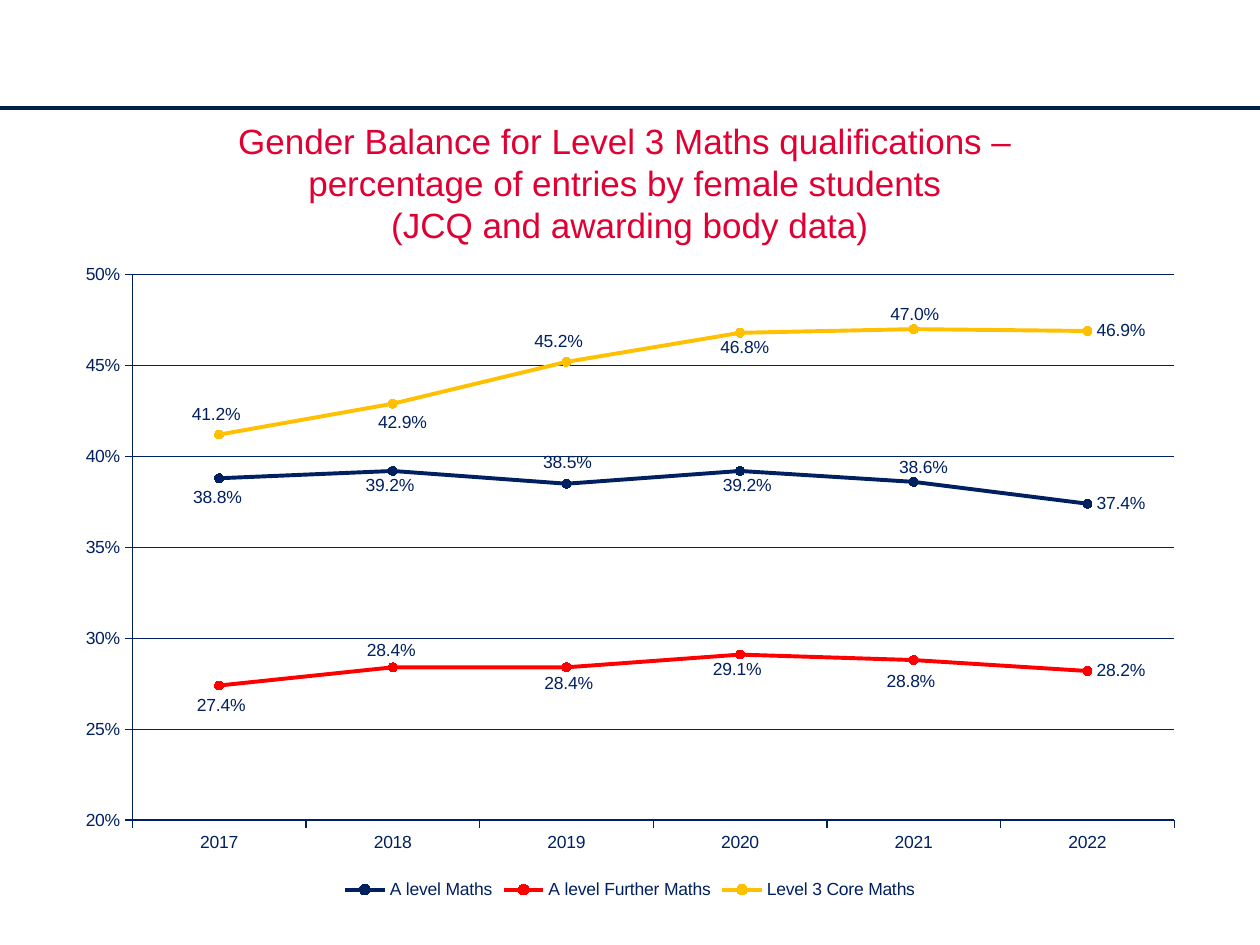
from dataclasses import dataclass

from lxml import etree
from pptx import Presentation
from pptx.chart.data import CategoryChartData
from pptx.dml.color import RGBColor
from pptx.enum.chart import (
    XL_CHART_TYPE as ChartType,
    XL_LABEL_POSITION as LabelPosition,
    XL_LEGEND_POSITION as LegendPosition,
    XL_MARKER_STYLE as MarkerStyle,
    XL_TICK_MARK as TickMark,
)
from pptx.enum.shapes import MSO_CONNECTOR as Connector
from pptx.enum.text import MSO_ANCHOR as Anchor, PP_ALIGN as Align
from pptx.oxml.ns import qn
from pptx.util import Inches, Pt


@dataclass(frozen=True)
class Theme:
    font: str = "Arial"
    title_size: int = 20
    chart_size: int = 10
    rule_width: float = 2.25
    axis_width: float = 0.75
    marker_size: int = 5
    rule: str = "002147"
    title: str = "E00034"
    navy: str = "002060"
    red: str = "FF0000"
    amber: str = "FFC000"


THEME = Theme()
CHART_BOX = (0.5, 2, 9, 5.18)
PLOT_BOX = (0.55, 0.18, 8.27, 4.33)
TITLE_LINES = (
    "Gender Balance for Level 3 Maths qualifications – ",
    "percentage of entries by female students ",
    "(JCQ and awarding body data)",
)
YEARS = ("2017", "2018", "2019", "2020", "2021", "2022")

# Name, colour, values, and label shifts in inches from the place right of the marker
SERIES = (
    ("A level Maths", THEME.navy,
     (0.388, 0.392, 0.385, 0.392, 0.386, 0.374),
     ((-0.28, 0.15), (-0.29, 0.12), (-0.26, -0.17), (-0.21, 0.12), (-0.19, -0.11))),
    ("A level Further Maths", THEME.red,
     (0.274, 0.284, 0.284, 0.291, 0.288, 0.282),
     ((-0.25, 0.16), (-0.28, -0.13), (-0.25, 0.13), (-0.29, 0.12), (-0.29, 0.17))),
    ("Level 3 Core Maths", THEME.amber,
     (0.412, 0.429, 0.452, 0.468, 0.47, 0.469),
     ((-0.29, -0.16), (-0.19, 0.15), (-0.33, -0.16), (-0.23, 0.12), (-0.26, -0.12))),
)


def manual_layout(**settings):
    layout = etree.Element(qn("c:layout"))
    manual = etree.SubElement(layout, qn("c:manualLayout"))
    for name, value in settings.items():
        etree.SubElement(manual, qn(f"c:{name}")).set("val", str(value))
    return layout


class SlideBuilder:
    def __init__(self, page, theme):
        self.page = page
        self.theme = theme

    def style_font(self, font, size, color):
        font.name = self.theme.font
        font.size = Pt(size)
        font.color.rgb = RGBColor.from_string(color)

    def style_chart_font(self, font):
        self.style_font(font, self.theme.chart_size, self.theme.navy)

    def style_line(self, line, color, width):
        line.color.rgb = RGBColor.from_string(color)
        line.width = Pt(width)

    def rule(self, y):
        rule = self.page.shapes.add_connector(
            Connector.STRAIGHT, Inches(0), Inches(y), Inches(10), Inches(y))
        self.style_line(rule.line, self.theme.rule, self.theme.rule_width)
        etree.SubElement(rule._element.spPr, qn("a:effectLst"))

    def title(self, lines, bounds):
        box = self.page.shapes.add_textbox(*map(Inches, bounds))
        frame = box.text_frame
        frame.word_wrap = True
        frame.vertical_anchor = Anchor.MIDDLE
        para = frame.paragraphs[0]
        para.alignment = Align.CENTER
        self.style_font(para.font, self.theme.title_size, self.theme.title)
        for index, line in enumerate(lines):
            if index:
                para.add_line_break()
            span = para.add_run()
            span.text = line
            self.style_font(span.font, self.theme.title_size, self.theme.title)

    def line_chart(self, bounds, plot_bounds, categories, series_rows):
        data = CategoryChartData(number_format="0.0%")
        data.categories = categories
        for name, _, values, _ in series_rows:
            data.add_series(name, values)
        chart = self.page.shapes.add_chart(
            ChartType.LINE_MARKERS, *map(Inches, bounds), data).chart
        self.style_chart_font(chart.font)
        chart.has_title = False
        chart.has_legend = True
        chart.legend.position = LegendPosition.BOTTOM
        chart.legend.include_in_layout = False
        self.style_chart_font(chart.legend.font)

        width, height = bounds[2:]
        x, y, w, h = plot_bounds
        plot_area = chart._chartSpace.chart.plotArea
        for old_layout in plot_area.findall(qn("c:layout")):
            plot_area.remove(old_layout)
        plot_area.insert(0, manual_layout(
            layoutTarget="inner", xMode="edge", yMode="edge",
            x=x / width, y=y / height, w=w / width, h=h / height))

        self.axes(chart)
        chart.plots[0].vary_by_categories = False
        for series, (_, color, _, shifts) in zip(chart.plots[0].series, series_rows):
            self.series(series, color)
            self.labels(series, shifts, width, height)

    def axes(self, chart):
        for axis in (chart.category_axis, chart.value_axis):
            axis.major_tick_mark = TickMark.OUTSIDE
            axis.minor_tick_mark = TickMark.NONE
            self.style_chart_font(axis.tick_labels.font)
            self.style_line(axis.format.line, self.theme.navy, self.theme.axis_width)
        values = chart.value_axis
        values.minimum_scale, values.maximum_scale, values.major_unit = 0.2, 0.5, 0.05
        values.tick_labels.number_format = "0%"
        values.tick_labels.number_format_is_linked = False
        values.has_major_gridlines = True
        self.style_line(values.major_gridlines.format.line,
                        self.theme.navy, self.theme.axis_width)

    def series(self, series, color):
        series.smooth = False
        self.style_line(series.format.line, color, self.theme.rule_width)
        marker = series.marker
        marker.style = MarkerStyle.CIRCLE
        marker.size = self.theme.marker_size
        marker.format.fill.solid()
        marker.format.fill.fore_color.rgb = RGBColor.from_string(color)
        self.style_line(marker.format.line, color, self.theme.axis_width)

    def labels(self, series, shifts, width, height):
        labels = series.data_labels
        labels.show_value = True
        labels.number_format = "0.0%"
        labels.number_format_is_linked = False
        labels.position = LabelPosition.RIGHT
        self.style_chart_font(labels.font)
        for index in range(len(shifts)):
            label = series.points[index].data_label
            self.style_chart_font(label.font)
            label.position = LabelPosition.RIGHT
        for label, (dx, dy) in zip(labels._element.findall(qn("c:dLbl")), shifts):
            label.insert(1, manual_layout(x=dx / width, y=dy / height))


def main():
    deck = Presentation()
    deck.slide_width, deck.slide_height = Inches(10), Inches(7.5)
    builder = SlideBuilder(deck.slides.add_slide(deck.slide_layouts[6]), THEME)
    builder.rule(0.86)
    builder.title(TITLE_LINES, (0.5, 0.89, 9, 1.11))
    builder.line_chart(CHART_BOX, PLOT_BOX, YEARS, SERIES)
    deck.save("out.pptx")


if __name__ == "__main__":
    main()
